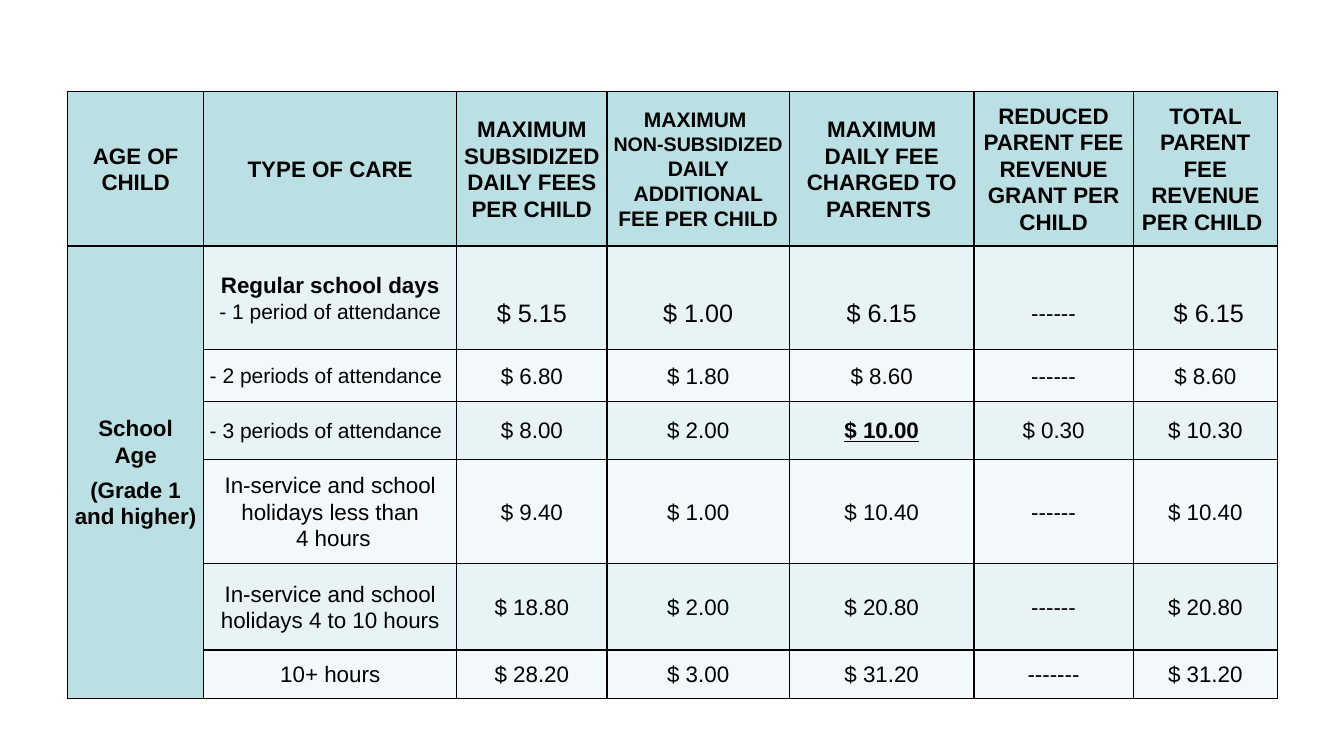
from dataclasses import dataclass
from lxml.etree import SubElement
from pptx import Presentation
from pptx.dml.color import RGBColor
from pptx.enum.text import MSO_ANCHOR, PP_ALIGN
from pptx.oxml.ns import qn
from pptx.util import Inches, Pt


@dataclass(frozen=True)
class Theme:
    font: str = "Arial"
    ink: str = "000000"
    head: str = "BBE0E3"
    bands: tuple = ("F3F9FA", "E7F3F4")
    tiny: int = 14
    small: int = 15
    base: int = 16
    large: int = 18


theme = Theme()


def style(cell, fill):
    cell.margin_left = cell.margin_right = Inches(0.06)
    cell.margin_top = cell.margin_bottom = 0
    cell.vertical_anchor = MSO_ANCHOR.MIDDLE
    props = cell._tc.get_or_add_tcPr()
    for side in ("a:lnL", "a:lnR", "a:lnT", "a:lnB"):
        line = SubElement(props, qn(side), w=str(Pt(1)))
        paint = SubElement(line, qn("a:solidFill"))
        SubElement(paint, qn("a:srgbClr"), val=theme.ink)
    cell.fill.solid()
    cell.fill.fore_color.rgb = RGBColor.from_string(fill)


def format_line(para, size, bold):
    para.alignment = PP_ALIGN.CENTER
    para.line_spacing = 1.07
    para.font.name = theme.font
    para.font.size = Pt(size)
    para.font.bold = bold
    para.font.color.rgb = RGBColor.from_string(theme.ink)


widths = [1.35, 2.51, 1.49, 1.81, 1.83, 1.58, 1.43]
heights = [1.53, 1.03, 0.51, 0.58, 1.03, 0.86, 0.48]
rows = [
    ["AGE OF CHILD", "TYPE OF CARE", "MAXIMUM SUBSIDIZED DAILY FEES PER CHILD", "",
     "MAXIMUM DAILY FEE CHARGED TO PARENTS ",
     "REDUCED PARENT FEE REVENUE GRANT PER CHILD",
     "TOTAL PARENT FEE REVENUE PER CHILD "],
    ["School\nAge\n(Grade 1 and higher)", "",
     "$ 5.15", "$ 1.00", "$ 6.15", "------", "\u00a0$ 6.15".replace("\u00a0", " ")],
    ["", "- 2 periods of attendance", "$ 6.80", "$ 1.80", "$ 8.60", "------", "$ 8.60"],
    ["", "- 3 periods of attendance", "$ 8.00", "$ 2.00", "$ 10.00", "$ 0.30", "$ 10.30"],
    ["", "In-service and school holidays less than\n 4 hours",
     "$ 9.40", "$ 1.00", "$ 10.40", "------", "$ 10.40"],
    ["", "In-service and school holidays 4 to 10 hours",
     "$ 18.80", "$ 2.00", "$ 20.80", "------", "$ 20.80"],
    ["", "10+ hours", "$ 28.20", "$ 3.00", "$ 31.20", "-------", "$ 31.20"],
]
mixed = {
    (0, 3): [("MAXIMUM \n", theme.small, True), ("NON-SUBSIDIZED ", theme.tiny, True),
             ("DAILY ADDITIONAL FEE PER CHILD", theme.small, True)],
    (1, 1): [("Regular school days\n", theme.base, True),
             ("- 1 period of attendance", theme.small, False)],
}

deck = Presentation()
deck.slide_width = Inches(13.33)
deck.slide_height = Inches(7.5)
slide = deck.slides.add_slide(deck.slide_layouts[6])
table = slide.shapes.add_table(
    len(rows), len(widths), Inches(0.67), Inches(0.91),
    Inches(sum(widths)), Inches(sum(heights))).table
table.first_row = table.horz_banding = False
for col, width in zip(table.columns, widths):
    col.width = Inches(width)
for row, height in zip(table.rows, heights):
    row.height = Inches(height)
age = table.cell(1, 0)
age.merge(table.cell(6, 0))

for r, texts in enumerate(rows):
    for c, text in enumerate(texts):
        cell = table.cell(r, c)
        style(cell, theme.head if r == 0 or c == 0 else theme.bands[r % 2])
        if cell.is_spanned:
            continue
        para = cell.text_frame.paragraphs[0]
        size = theme.base
        if r == 1 and c > 1:
            cell.margin_top = Inches(0.3)
            size = theme.base if c == 5 else theme.large
        if c == 1 and r in (2, 3):
            size = theme.small
        if (r, c) in mixed:
            for words, points, bold in mixed[r, c]:
                run = para.add_run()
                run.text = words.rstrip("\n")
                run.font.size = Pt(points)
                run.font.bold = bold
                if words.endswith("\n"):
                    para.add_line_break()
            size = theme.small if r == 0 else theme.base
        elif c == 0:
            cell.text_frame.text = text
        else:
            para.text = text
        for para in cell.text_frame.paragraphs:
            format_line(para, size, r == 0 or c == 0)
        if c == 1 and r in (2, 3):
            para.alignment = PP_ALIGN.LEFT

age.text_frame.paragraphs[1].space_after = Pt(6)
capped = table.cell(3, 4).text_frame.paragraphs[0]
capped.font.bold = True
capped.font.underline = True

deck.save("out.pptx")
